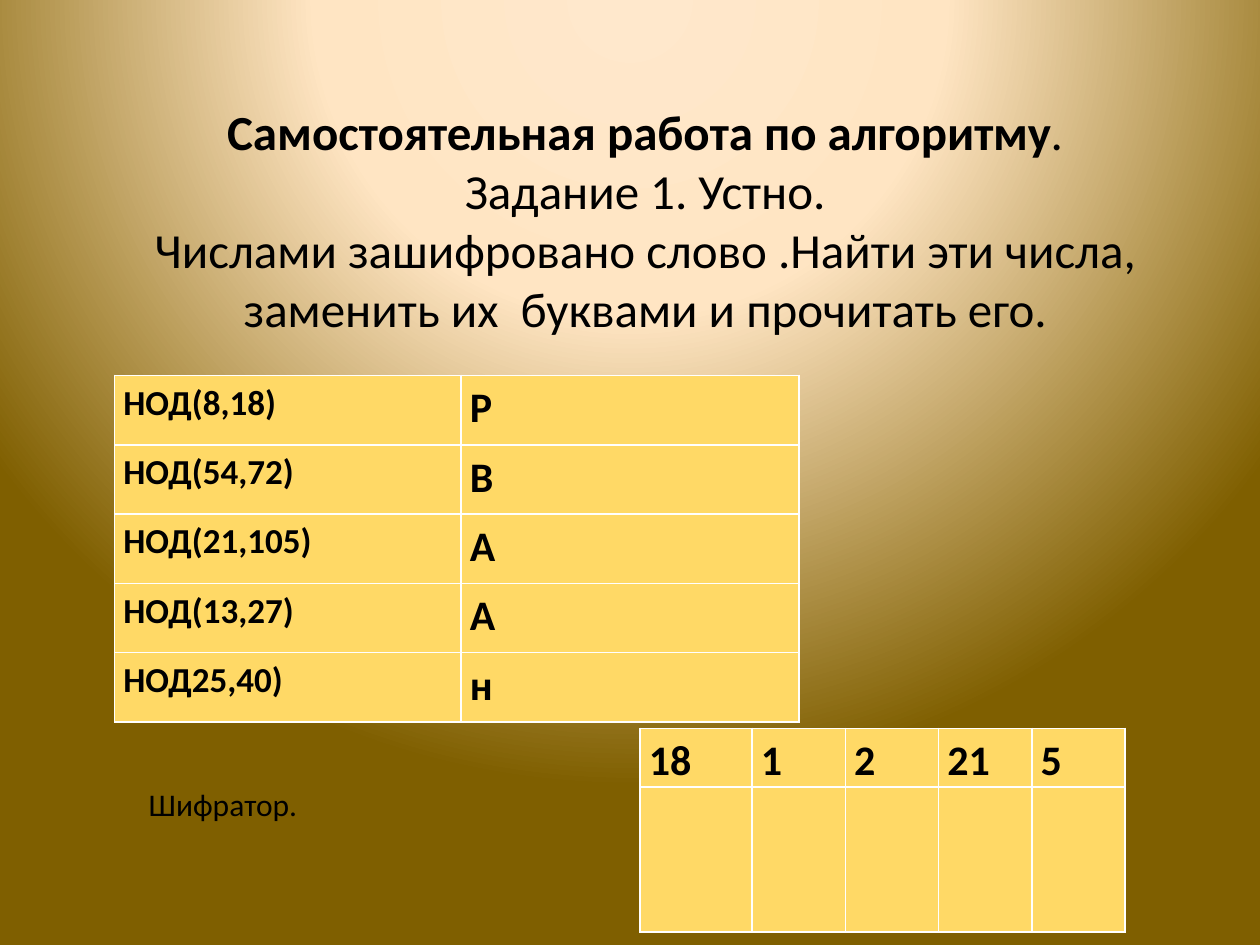
from pptx import Presentation
from pptx.dml.color import RGBColor
from pptx.enum import text
from pptx.oxml import parse_xml
from pptx.oxml import ns
from pptx.util import Inches, Pt

THEME = {
    "font": "Calibri",
    "ink": RGBColor.from_string("000000"),
    "cell": RGBColor.from_string("FFD966"),
    "border": "FFFFFF",
    "background": [(0, "FFE8CC"), (40, "FFE5C3"), (100, "7F5F00")],
    "heading": 28,
    "letter": 24,
    "task": 20,
    "label": 18,
}

HEADING = [
    [("Самостоятельная работа по алгоритму", True), (".", False)],
    [("Задание 1. Устно.", False)],
    [("Числами зашифровано слово .Найти эти числа, заменить их  буквами и прочитать его.", False)],
]
LABEL = [[("Шифратор.", False)]]
TASKS = {
    "at": (0.91, 2.98),
    "columns": [2.75, 2.68],
    "rows": [0.55] * 5,
    "sizes": [THEME["task"], THEME["letter"]],
    "cells": [
        ("НОД(8,18)", "Р"),
        ("НОД(54,72)", "В"),
        ("НОД(21,105)", "А"),
        ("НОД(13,27)", "А"),
        ("НОД25,40)", "н"),
    ],
}
CIPHER = {
    "at": (5.08, 5.78),
    "columns": [0.89] + [0.74] * 4,
    "rows": [0.46, 1.15],
    "sizes": [THEME["letter"]] * 5,
    "cells": [("18", "1", "2", "21", "5"), ("",) * 5],
}


def style_font(font, size, bold):
    font.name = THEME["font"]
    font.size = Pt(size)
    font.bold = bold
    font.color.rgb = THEME["ink"]


def paint_background(slide):
    slide.background.fill.gradient()
    gradient = slide.element.find(".//" + ns.qn("a:gradFill"))
    stops = "".join(
        f'<a:gs pos="{position * 1000}"><a:srgbClr val="{color}"/></a:gs>'
        for position, color in THEME["background"]
    )
    circle = parse_xml(
        f'<a:gradFill {ns.nsdecls("a")} rotWithShape="1"><a:gsLst>{stops}</a:gsLst>'
        '<a:path path="circle"><a:fillToRect l="50000" t="-80000" r="50000" b="180000"/>'
        "</a:path></a:gradFill>"
    )
    gradient.getparent().replace(gradient, circle)


def add_text(slide, box, paragraphs, size, anchor):
    frame = slide.shapes.add_textbox(*map(Inches, box)).text_frame
    frame.word_wrap = True
    frame.vertical_anchor = anchor
    for index, runs in enumerate(paragraphs):
        paragraph = frame.add_paragraph() if index else frame.paragraphs[0]
        paragraph.alignment = text.PP_ALIGN.CENTER
        style_font(paragraph.font, size, False)
        for words, bold in runs:
            run = paragraph.add_run()
            run.text = words
            style_font(run.font, size, bold)


def add_borders(cell):
    properties = cell._tc.get_or_add_tcPr()
    for index, side in enumerate(("lnL", "lnR", "lnT", "lnB")):
        line = parse_xml(
            f'<a:{side} {ns.nsdecls("a")} w="{Pt(1)}"><a:solidFill>'
            f'<a:srgbClr val="{THEME["border"]}"/></a:solidFill></a:{side}>'
        )
        properties.insert(index, line)


def add_grid(slide, grid):
    columns, rows = grid["columns"], grid["rows"]
    box = (*grid["at"], sum(columns), sum(rows))
    table = slide.shapes.add_table(len(rows), len(columns), *map(Inches, box)).table
    table.first_row = table.horz_banding = False
    for column, width in zip(table.columns, columns):
        column.width = Inches(width)
    for row, height, words in zip(table.rows, rows, grid["cells"]):
        row.height = Inches(height)
        for cell, word, size in zip(row.cells, words, grid["sizes"]):
            cell.text = word
            cell.margin_left = cell.margin_right = Inches(0.07)
            cell.margin_top = cell.margin_bottom = 0
            cell.fill.solid()
            cell.fill.fore_color.rgb = THEME["cell"]
            paragraph = cell.text_frame.paragraphs[0]
            paragraph.line_spacing = 1.15
            style_font(paragraph.font, size, True)
            add_borders(cell)


def main():
    presentation = Presentation()
    presentation.slide_width, presentation.slide_height = Inches(10), Inches(7.5)
    slide = presentation.slides.add_slide(presentation.slide_layouts[6])
    paint_background(slide)
    add_grid(slide, TASKS)
    add_grid(slide, CIPHER)
    add_text(slide, (0.59, 0.76, 9.06, 2.52), HEADING, THEME["heading"], text.MSO_ANCHOR.TOP)
    add_text(slide, (0.59, 4.36, 2.36, 2.22), LABEL, THEME["label"], text.MSO_ANCHOR.BOTTOM)
    presentation.save("out.pptx")


if __name__ == "__main__":
    main()
